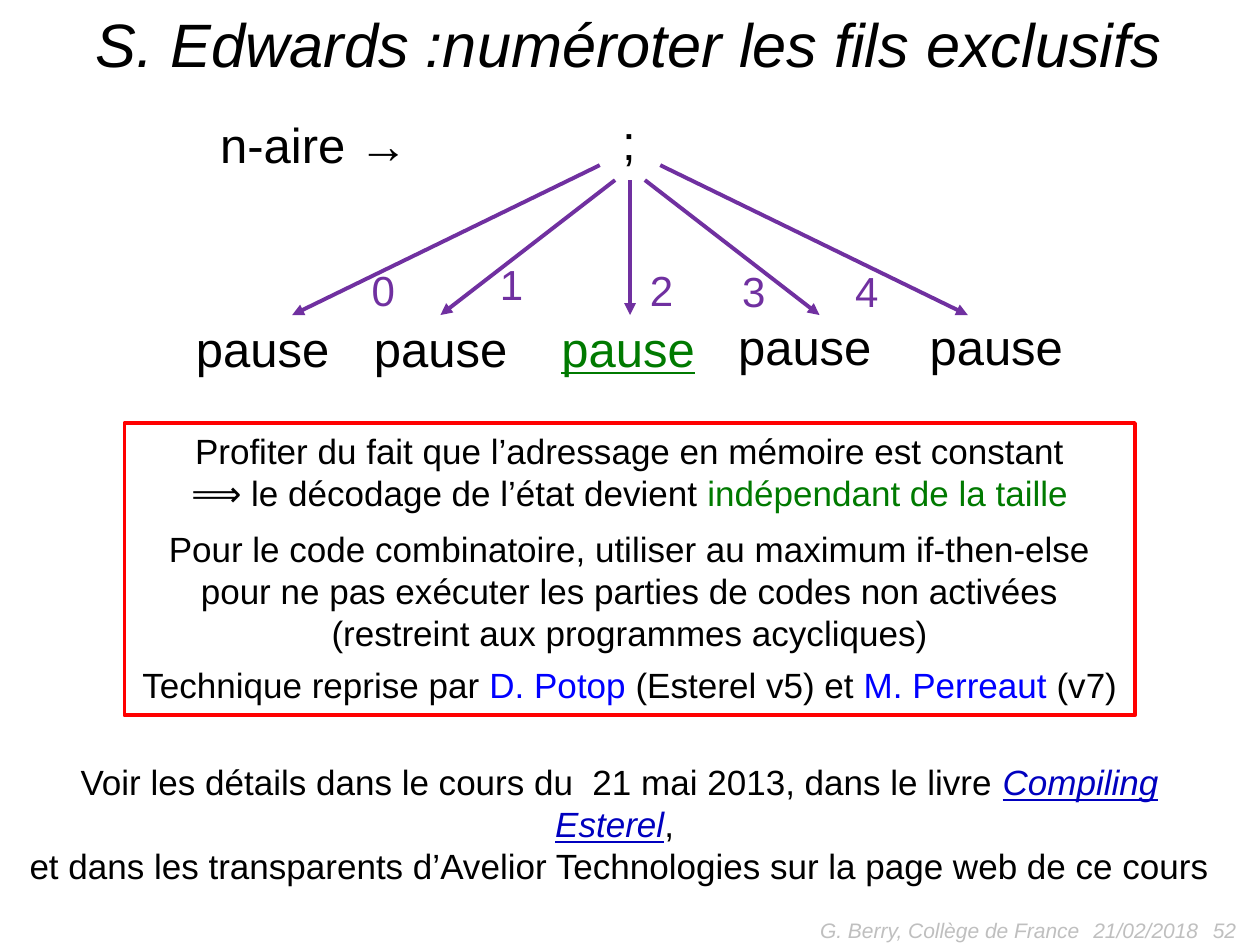
from dataclasses import dataclass

from pptx import Presentation
from pptx.dml.color import RGBColor
from pptx.enum.shapes import MSO_CONNECTOR, MSO_SHAPE
from pptx.enum.text import MSO_ANCHOR, MSO_AUTO_SIZE, PP_ALIGN
from pptx.oxml.ns import qn
from pptx.util import Cm, Pt

LEFT, CENTER, RIGHT = PP_ALIGN.LEFT, PP_ALIGN.CENTER, PP_ALIGN.RIGHT
TOP, MIDDLE = MSO_ANCHOR.TOP, MSO_ANCHOR.MIDDLE
FIT_SHAPE = MSO_AUTO_SIZE.SHAPE_TO_FIT_TEXT
STRAIGHT = MSO_CONNECTOR.STRAIGHT
RECTANGLE = MSO_SHAPE.RECTANGLE


@dataclass(frozen=True)
class Theme:
    font: str = "Arial"
    black: str = "000000"
    green: str = "007A00"
    blue: str = "0000FF"
    title_blue: str = "0000BF"
    purple: str = "7030A0"
    red: str = "FF0000"
    grey: str = "BFBFBF"
    title: int = 35
    node: int = 28
    label: int = 24
    body: int = 20
    footer: int = 12
    line: float = 2.25


THEME = Theme()


def write_text(shape, paragraphs, size=THEME.body, color=THEME.black, italic=False,
               underline=False, align=LEFT, anchor=TOP, wrap=True, fit=True, space_before=()):
    """Each paragraph is a list of runs: a string, or (string, format overrides)."""
    frame = shape.text_frame
    frame.word_wrap = wrap
    frame.vertical_anchor = anchor
    if fit:
        frame.auto_size = FIT_SHAPE
    for index, runs in enumerate(paragraphs):
        paragraph = frame.add_paragraph() if index else frame.paragraphs[0]
        paragraph.alignment = align
        if index < len(space_before):
            paragraph.space_before = Pt(space_before[index])
        for item in runs:
            text, changes = (item, {}) if isinstance(item, str) else item
            run = paragraph.add_run()
            run.text = text
            run.font.name = THEME.font
            run.font.size = Pt(size)
            run.font.color.rgb = RGBColor.from_string(changes.get("color", color))
            run.font.italic = changes.get("italic", italic)
            run.font.underline = changes.get("underline", underline)


def add_text(slide, box, paragraphs, **text_format):
    shape = slide.shapes.add_textbox(*(Cm(length) for length in box))
    write_text(shape, paragraphs, **text_format)


def add_arrow(slide, tip, tail):
    connector = slide.shapes.add_connector(STRAIGHT, *(Cm(length) for length in (*tip, *tail)))
    connector.line.color.rgb = RGBColor.from_string(THEME.purple)
    connector.line.width = Pt(THEME.line)
    line = connector.line._get_or_add_ln()
    line.append(line.makeelement(qn("a:headEnd"), {"type": "triangle"}))
    properties = connector._element.spPr
    properties.append(properties.makeelement(qn("a:effectLst"), {}))


def add_title(slide, box):
    add_text(slide, box, [["S. Edwards :numéroter les fils exclusifs"]],
             size=THEME.title, italic=True, align=CENTER)


def add_thread_tree(slide, box):
    left, top, width, height = box
    middle = left + width / 2
    node_height, label_height = 1.45, 1.27

    for x, y, node_width, text in ((8.59, 0, 0.79, ";"), (0.49, 0.05, 4.34, "n-aire →")):
        add_text(slide, (left + x, top + y, node_width, node_height), [[text]],
                 size=THEME.node, wrap=False)

    active = 2
    for index, (x, y) in enumerate(((0, 4.17), (3.59, 4.17), (7.37, 4.17),
                                    (10.93, 4.12), (14.79, 4.12))):
        add_text(slide, (left + x, top + y, 3.23, node_height), [["pause"]],
                 size=THEME.node, wrap=False, underline=index == active,
                 color=THEME.green if index == active else THEME.black)

    for tip, tail, tail_y in ((-6.81, -0.61, 1.2), (6.81, 0.61, 1.2),
                              (-3.82, -0.3, 1.5), (3.82, 0.3, 1.5), (0, 0, 1.5)):
        add_arrow(slide, (middle + tip, top + 4.22), (middle + tail, top + tail_y))

    for number, (x, y) in enumerate(((3.54, 3.08), (6.13, 2.95), (9.15, 3.08),
                                     (11.01, 3.1), (13.29, 3.1))):
        add_text(slide, (left + x, top + y, 1.17, label_height), [[str(number)]],
                 size=THEME.label, color=THEME.purple)


def add_technique_frame(slide, box):
    frame = slide.shapes.add_shape(RECTANGLE, *(Cm(length) for length in box))
    frame.shadow.inherit = False
    frame.fill.background()
    frame.line.color.rgb = RGBColor.from_string(THEME.red)
    frame.line.width = Pt(THEME.line)
    person = {"color": THEME.blue}
    write_text(frame, [
        ["Profiter du fait que l’adressage en mémoire est constant"],
        ["⟹ le décodage de l’état devient", (" indépendant de la taille", {"color": THEME.green})],
        ["Pour le code combinatoire, utiliser au maximum if-then-else"],
        ["pour ne pas exécuter les parties de codes non activées"],
        ["(restreint aux programmes acycliques)"],
        ["Technique reprise par ", ("D. Potop", person), " (Esterel v5) et ",
         ("M. Perreaut", person), " (v7)"],
    ], align=CENTER, wrap=False, space_before=(0, 0, 8, 0, 0, 6))


def add_references(slide, box):
    book = {"color": THEME.title_blue, "italic": True, "underline": True}
    add_text(slide, box, [
        ["Voir les détails dans le cours du  21 mai 2013, dans le livre ",
         ("Compiling Esterel", book), ", "],
        ["et dans les transparents d’Avelior Technologies sur la page web de ce cours"],
    ], align=CENTER)


def add_footer(slide, box):
    left, top, _, height = box
    for x, width, text, align in ((0, 8.05, "G. Berry, Collège de France", RIGHT),
                                  (7.82, 5.92, "21/02/2018", LEFT),
                                  (5.28, 5.92, " 52", RIGHT)):
        add_text(slide, (left + x, top, width, height), [[text]], size=THEME.footer,
                 color=THEME.grey, italic=True, align=align, anchor=MIDDLE, fit=False)


def main():
    presentation = Presentation()
    presentation.slide_width, presentation.slide_height = Cm(25.4), Cm(19.05)
    slide = presentation.slides.add_slide(presentation.slide_layouts[6])
    add_footer(slide, (13.97, 18.24, 11.2, 1.02))
    add_title(slide, (0.3, 0, 24.77, 1.75))
    add_technique_frame(slide, (2.51, 8.53, 20.37, 5.89))
    add_thread_tree(slide, (3.7, 2.13, 18, 5.62))
    add_references(slide, (0.08, 15.21, 24.82, 1.96))
    presentation.save("out.pptx")


if __name__ == "__main__":
    main()
